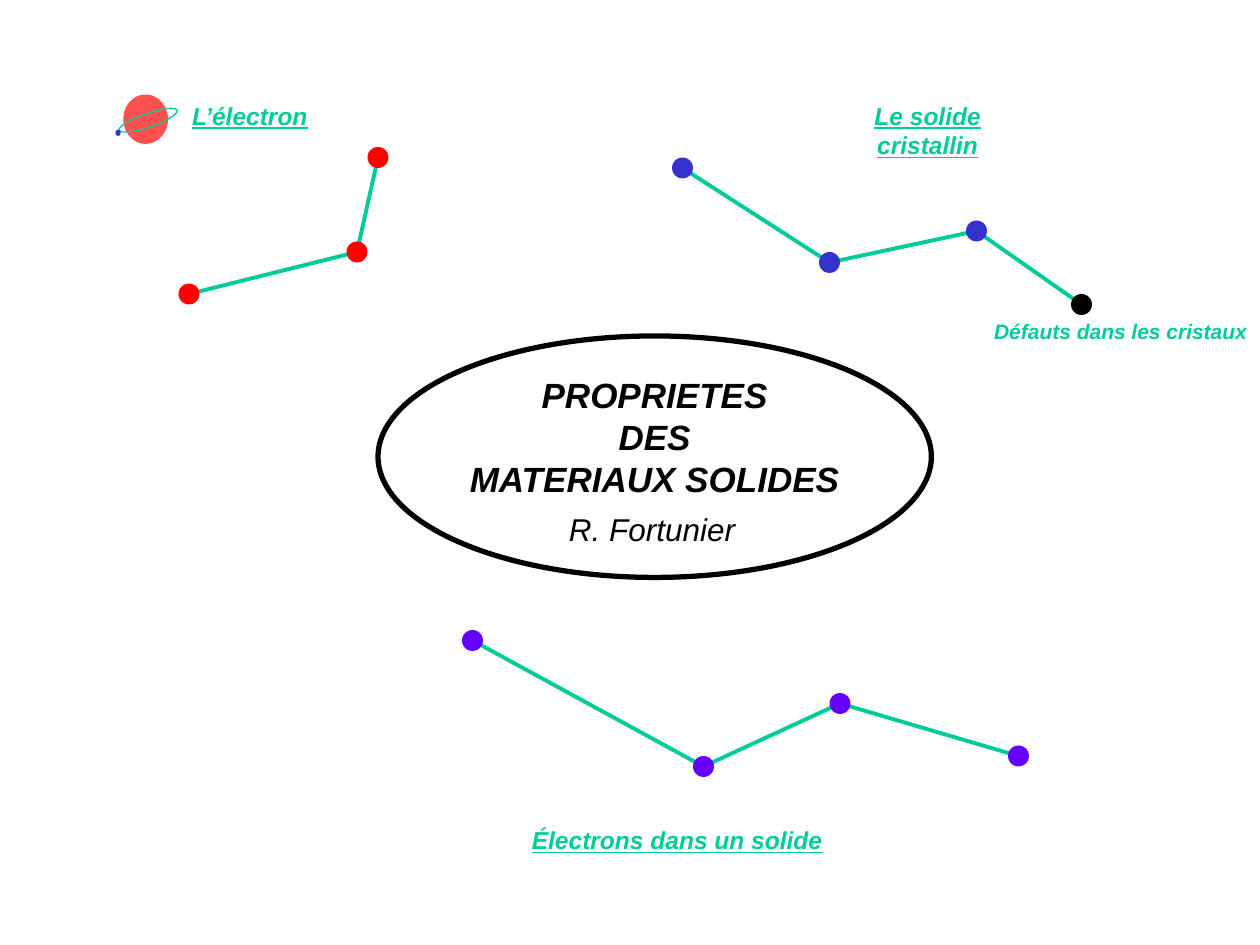
"""Build the title slide on the properties of solid materials."""
from dataclasses import dataclass
from typing import Optional

from lxml import etree
from pptx import Presentation
from pptx.dml.color import RGBColor
from pptx.enum.shapes import MSO_CONNECTOR, MSO_SHAPE
from pptx.enum.text import MSO_ANCHOR, MSO_AUTO_SIZE, PP_ALIGN
from pptx.oxml.ns import qn
from pptx.util import Inches, Pt

STRAIGHT = MSO_CONNECTOR.STRAIGHT
OVAL = MSO_SHAPE.OVAL
TOP, MIDDLE = MSO_ANCHOR.TOP, MSO_ANCHOR.MIDDLE
LEFT, CENTER, RIGHT = PP_ALIGN.LEFT, PP_ALIGN.CENTER, PP_ALIGN.RIGHT
NO_AUTOFIT, GROW = MSO_AUTO_SIZE.NONE, MSO_AUTO_SIZE.SHAPE_TO_FIT_TEXT

GREEN = RGBColor(0x00, 0xCC, 0x99)
RED = RGBColor(0xFF, 0x00, 0x00)
CORAL = RGBColor(0xFF, 0x50, 0x50)
BLUE = RGBColor(0x33, 0x33, 0xCC)
VIOLET = RGBColor(0x66, 0x00, 0xFF)
BLACK = RGBColor(0x00, 0x00, 0x00)

SLIDE_COLUMNS, SLIDE_ROWS = 120, 90
CELL = Inches(10) / SLIDE_COLUMNS
DOT_SIZE = 2


@dataclass(frozen=True)
class Box:
    left: float
    top: float
    width: float
    height: float

    def lengths(self) -> tuple:
        return tuple(cells(value) for value in (self.left, self.top, self.width, self.height))


@dataclass(frozen=True)
class Dot:
    column: float
    row: float
    color: RGBColor


@dataclass(frozen=True)
class Ellipse:
    box: Box
    fill: Optional[RGBColor] = None
    line: Optional[RGBColor] = None
    line_width: float = 0
    rotation: float = 0


@dataclass(frozen=True)
class Label:
    text: str
    box: Box
    size: int = 14
    color: RGBColor = GREEN
    bold: bool = True
    underline: bool = True
    alignment: PP_ALIGN = CENTER
    anchor: MSO_ANCHOR = TOP
    wrap: bool = True
    auto_size: MSO_AUTO_SIZE = GROW


CONSTELLATIONS = (
    (Dot(18, 28, RED), Dot(34, 24, RED), Dot(36, 15, RED)),
    (Dot(65, 16, BLUE), Dot(79, 25, BLUE), Dot(93, 22, BLUE), Dot(103, 29, BLACK)),
    (Dot(45, 61, VIOLET), Dot(67, 73, VIOLET), Dot(80, 67, VIOLET), Dot(97, 72, VIOLET)),
)

ELLIPSES = (
    Ellipse(Box(11.75, 9, 4.25, 4.7), fill=CORAL),
    Ellipse(Box(11.2, 10.8, 5.85, 1.3), line=GREEN, line_width=0.75, rotation=341.1),
    Ellipse(Box(11, 12.35, 0.5, 0.6), fill=BLUE),
    Ellipse(Box(36, 32, 52.7, 23), line=BLACK, line_width=3),
)

TITLE = Label("Défauts dans les cristaux", Box(93, 30, 27, 3), 12, underline=False,
              alignment=RIGHT, anchor=MIDDLE, auto_size=NO_AUTOFIT)

LABELS = (
    Label("Le solide cristallin", Box(77, 9, 22.7, 4)),
    Label("L’électron", Box(17, 9, 13.6, 4), wrap=False),
    Label("Électrons dans un solide", Box(49, 78, 31, 4)),
    Label("R. Fortunier", Box(53, 48, 18.25, 4.8), 18, BLACK, bold=False,
          underline=False, alignment=LEFT, wrap=False),
    Label("PROPRIETES\vDES\vMATERIAUX SOLIDES", Box(35.85, 35, 53, 13), 20, BLACK,
          underline=False, auto_size=NO_AUTOFIT),
)


def cells(count: float) -> int:
    return round(count * CELL)


def draw_ellipse(slide, ellipse: Ellipse) -> None:
    shape = slide.shapes.add_shape(OVAL, *ellipse.box.lengths())
    shape.shadow.inherit = False
    shape.rotation = ellipse.rotation
    if ellipse.fill is None:
        shape.fill.background()
    else:
        shape.fill.solid()
        shape.fill.fore_color.rgb = ellipse.fill
    if ellipse.line is None:
        shape.line.fill.background()
    else:
        shape.line.color.rgb = ellipse.line
        shape.line.width = Pt(ellipse.line_width)


def draw_link(slide, start: Dot, end: Dot) -> None:
    connector = slide.shapes.add_connector(
        STRAIGHT, cells(start.column), cells(start.row), cells(end.column), cells(end.row))
    connector.line.color.rgb = GREEN
    connector.line.width = Pt(2.25)
    etree.SubElement(connector._element.spPr, qn("a:effectLst"))


def draw_constellation(slide, dots: tuple) -> None:
    for start, end in zip(dots, dots[1:]):
        draw_link(slide, start, end)
    for dot in dots:
        box = Box(dot.column - DOT_SIZE / 2, dot.row - DOT_SIZE / 2, DOT_SIZE, DOT_SIZE)
        draw_ellipse(slide, Ellipse(box, fill=dot.color))


def format_label(shape, label: Label) -> None:
    shape.left, shape.top, shape.width, shape.height = label.box.lengths()
    text_frame = shape.text_frame
    text_frame.word_wrap = label.wrap
    text_frame.auto_size = label.auto_size
    text_frame.vertical_anchor = label.anchor
    paragraph = text_frame.paragraphs[0]
    paragraph.text = label.text
    paragraph.alignment = label.alignment
    for run in paragraph.runs:
        font = run.font
        font.name = "Arial"
        font.size = Pt(label.size)
        font.bold = label.bold
        font.italic = True
        font.underline = label.underline
        font.color.rgb = label.color


def main() -> None:
    presentation = Presentation()
    presentation.slide_width = cells(SLIDE_COLUMNS)
    presentation.slide_height = cells(SLIDE_ROWS)
    slide = presentation.slides.add_slide(presentation.slide_layouts[5])
    format_label(slide.shapes.title, TITLE)
    for dots in CONSTELLATIONS:
        draw_constellation(slide, dots)
    for ellipse in ELLIPSES:
        draw_ellipse(slide, ellipse)
    for label in LABELS:
        format_label(slide.shapes.add_textbox(*label.box.lengths()), label)
    presentation.save("out.pptx")


if __name__ == "__main__":
    main()
